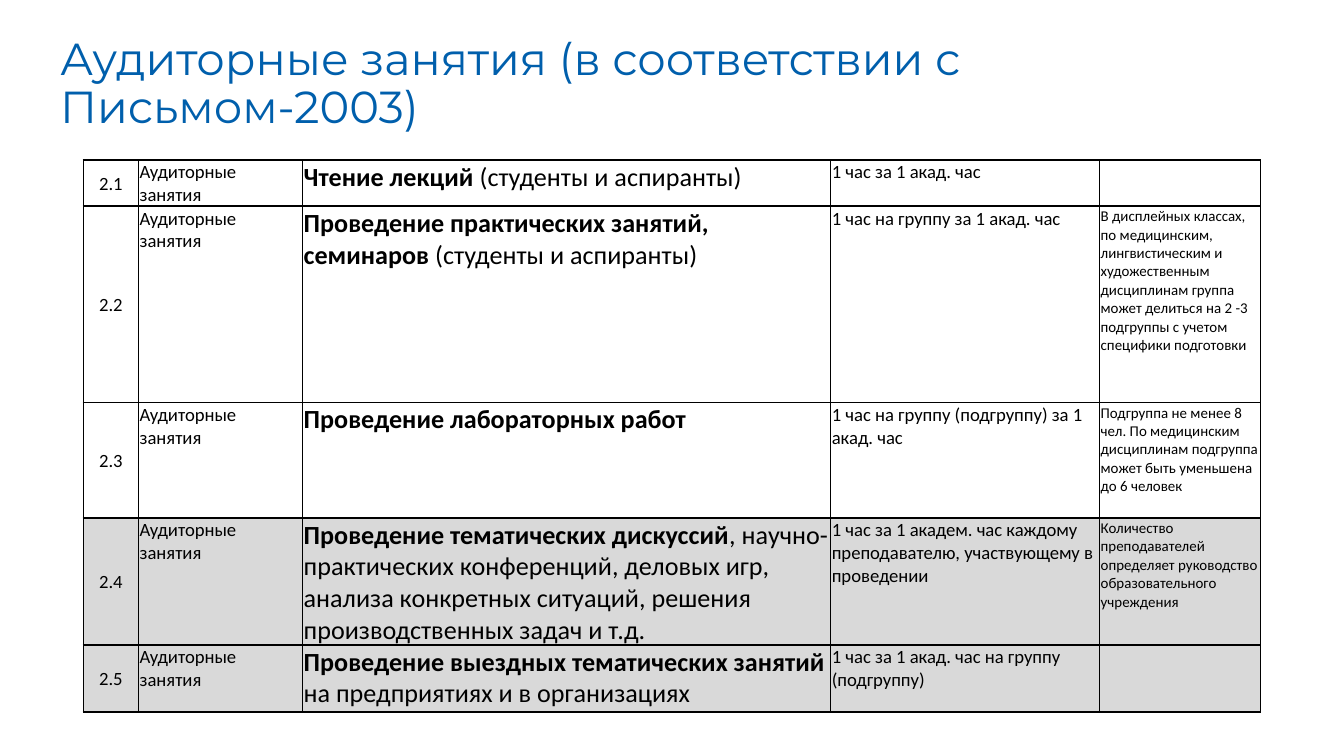
from dataclasses import dataclass

from lxml import etree
from pptx import Presentation
from pptx.dml.color import RGBColor
from pptx.enum.text import MSO_ANCHOR, PP_ALIGN
from pptx.oxml.ns import qn
from pptx.util import Inches, Pt

TOP, MIDDLE, BOTTOM = MSO_ANCHOR.TOP, MSO_ANCHOR.MIDDLE, MSO_ANCHOR.BOTTOM
LEFT, CENTER = PP_ALIGN.LEFT, PP_ALIGN.CENTER
BLANK_LAYOUT = 6
SLIDE_WIDTH = 10
SLIDE_HEIGHT = SLIDE_WIDTH * 9 / 16


@dataclass(frozen=True)
class Theme:
    title_font: str = "Montserrat"
    body_font: str = "Calibri"
    title: str = "005FAC"
    text: str = "000000"
    border: str = "000000"
    plain: str = "FFFFFF"
    shaded: str = "D9D9D9"
    title_size: int = 24
    activity_size: int = 14
    body_size: int = 10
    note_size: int = 8
    border_width: int = 1


class SlideBuilder:
    def __init__(self, presentation, theme):
        self.theme = theme
        self.width = presentation.slide_width
        self.height = presentation.slide_height
        self.slide = presentation.slides.add_slide(presentation.slide_layouts[BLANK_LAYOUT])

    def area(self, left, top, width, height):
        return (int(left * self.width), int(top * self.height),
                int(width * self.width), int(height * self.height))

    def style(self, font, name, size, color):
        font.name = name
        font.size = Pt(size)
        font.color.rgb = RGBColor.from_string(color)

    def title(self, text, *shares):
        frame = self.slide.shapes.add_textbox(*self.area(*shares)).text_frame
        frame.word_wrap = True
        frame.vertical_anchor = BOTTOM
        paragraph = frame.paragraphs[0]
        paragraph.text = text
        paragraph.line_spacing = 0.9
        self.style(paragraph.font, self.theme.title_font, self.theme.title_size, self.theme.title)

    def borders(self, cell):
        properties = cell._tc.get_or_add_tcPr()
        for side in ("a:lnL", "a:lnR", "a:lnT", "a:lnB"):
            line = etree.SubElement(properties, qn(side), w=str(Pt(self.theme.border_width)))
            fill = etree.SubElement(line, qn("a:solidFill"))
            etree.SubElement(fill, qn("a:srgbClr"), val=self.theme.border)

    def cell(self, cell, parts, size, fill, align, anchor):
        self.borders(cell)
        cell.fill.solid()
        cell.fill.fore_color.rgb = RGBColor.from_string(fill)
        cell.margin_left = cell.margin_right = cell.margin_top = Inches(0.01)
        cell.margin_bottom = 0
        cell.vertical_anchor = anchor
        paragraph = cell.text_frame.paragraphs[0]
        paragraph.alignment = align
        self.style(paragraph.font, self.theme.body_font, size, self.theme.text)
        for text, bold in parts:
            run = paragraph.add_run()
            run.text = text
            run.font.bold = bold

    def table(self, rows, columns, column_shares, row_shares, left, top):
        place = self.area(left, top, sum(column_shares), sum(row_shares))
        table = self.slide.shapes.add_table(len(rows), len(columns), *place).table
        table.first_row = table.horz_banding = False
        for column, share in zip(table.columns, column_shares):
            column.width = int(share * self.width)
        for row, share in zip(table.rows, row_shares):
            row.height = int(share * self.height)
        for r, (fill, contents) in enumerate(rows):
            for c, (parts, (size, align, anchor)) in enumerate(zip(contents, columns)):
                self.cell(table.cell(r, c), parts, size, fill, align, anchor)


TITLE = "Аудиторные занятия (в соответствии с Письмом-2003)"
CATEGORY = "Аудиторные занятия"
AUDIENCE = "(студенты и аспиранты)"

ACTIVITIES = [
    ("Чтение лекций ", AUDIENCE, "1 час за 1 акад. час", ""),
    ("Проведение практических занятий, семинаров ", AUDIENCE,
     "1 час на группу за 1 акад. час",
     "В дисплейных классах, по медицинским, лингвистическим и художественным дисциплинам "
     "группа может делиться на 2 -3 подгруппы с учетом специфики подготовки"),
    ("Проведение лабораторных работ", "",
     "1 час на группу (подгруппу) за 1 акад. час",
     "Подгруппа не менее 8 чел. По медицинским дисциплинам подгруппа может быть "
     "уменьшена до 6 человек"),
    ("Проведение тематических дискуссий",
     ", научно-практических конференций, деловых игр, анализа конкретных ситуаций, "
     "решения производственных задач и т.д.",
     "1 час за 1 академ. час каждому преподавателю, участвующему в проведении",
     "Количество преподавателей определяет руководство образовательного учреждения"),
    ("Проведение выездных тематических занятий ", "на предприятиях и в организациях",
     "1 час за 1 акад. час на группу (подгруппу)", ""),
]
FIRST_SHADED = 4
COLUMN_WIDTHS = [0.41, 1.22, 3.93, 2, 1.2]
ROW_HEIGHTS = [0.26, 1.46, 0.86, 0.88, 0.5]


def parts(*texts):
    return [(text, bold) for text, bold in texts if text]


def shares(lengths, whole):
    return [length / whole for length in lengths]


def main():
    presentation = Presentation()
    presentation.slide_width = Inches(SLIDE_WIDTH)
    presentation.slide_height = Inches(SLIDE_HEIGHT)
    theme = Theme()
    builder = SlideBuilder(presentation, theme)
    builder.title(TITLE, 0.35 / SLIDE_WIDTH, 0.33 / SLIDE_HEIGHT,
                  7.5 / SLIDE_WIDTH, 0.71 / SLIDE_HEIGHT)

    columns = [
        (theme.body_size, CENTER, MIDDLE),
        (theme.body_size, LEFT, TOP),
        (theme.activity_size, LEFT, TOP),
        (theme.body_size, LEFT, TOP),
        (theme.note_size, LEFT, TOP),
    ]
    rows = []
    for number, (activity, detail, norm, note) in enumerate(ACTIVITIES, start=1):
        fill = theme.shaded if number >= FIRST_SHADED else theme.plain
        rows.append((fill, [
            parts((f"2.{number}", False)),
            parts((CATEGORY, False)),
            parts((activity, True), (detail, False)),
            parts((norm, False)),
            parts((note, False)),
        ]))
    builder.table(rows, columns, shares(COLUMN_WIDTHS, SLIDE_WIDTH),
                  shares(ROW_HEIGHTS, SLIDE_HEIGHT),
                  0.62 / SLIDE_WIDTH, 1.19 / SLIDE_HEIGHT)
    presentation.save("out.pptx")


if __name__ == "__main__":
    main()
